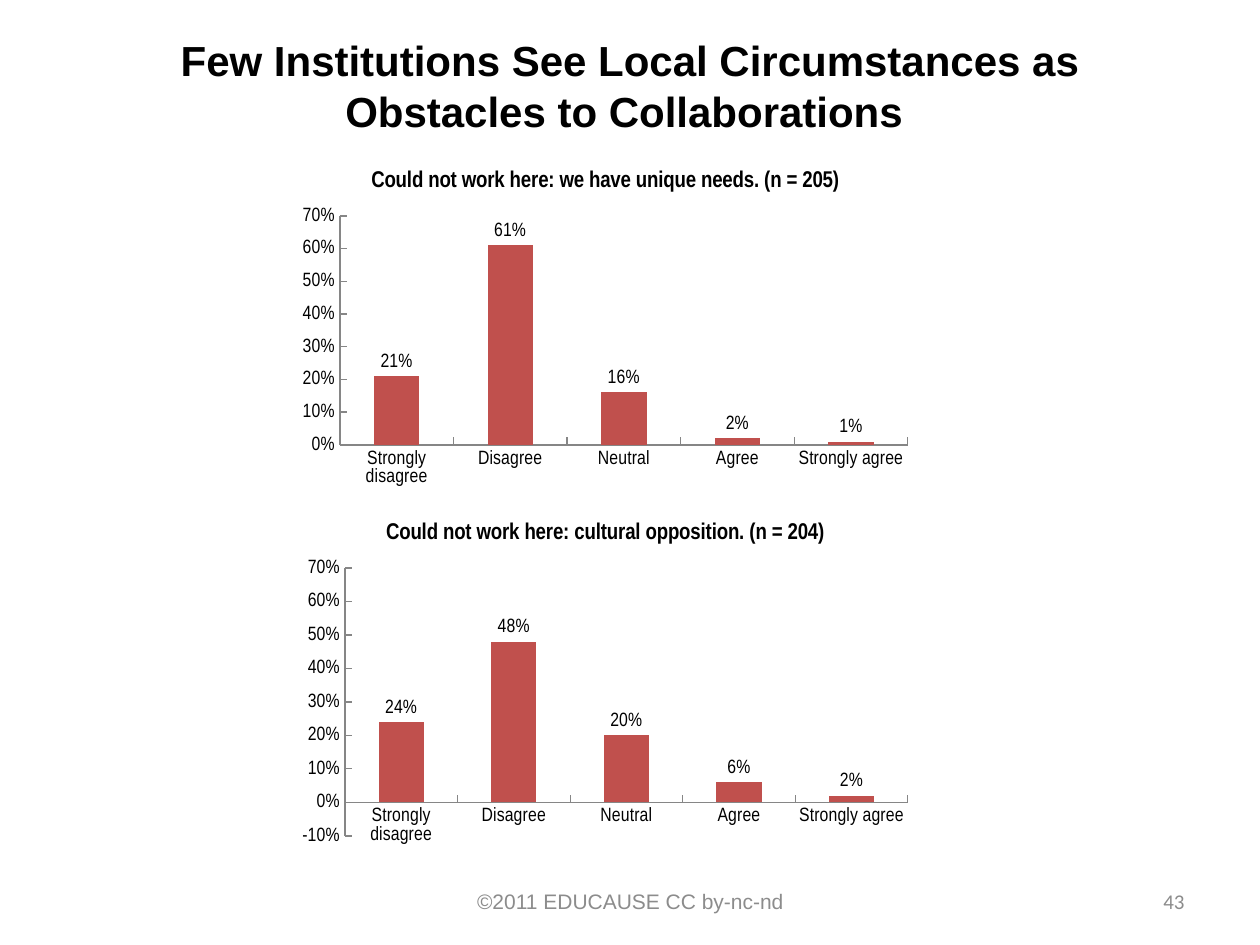
from dataclasses import dataclass

from lxml import etree
from pptx import Presentation
from pptx import util as u
from pptx.chart.data import CategoryChartData
from pptx.dml.color import RGBColor
from pptx.enum import chart as charts, text
from pptx.oxml import ns

PX_PER_INCH = 126


def px(length):
    return u.Emu(round(length * 914400 / PX_PER_INCH))


@dataclass(frozen=True)
class Theme:
    ink: str = "000000"
    muted: str = "8C8C8C"
    axis: str = "868686"
    bar: str = "C0504D"
    heading_font: str = "Arial"
    number_font: str = "Calibri"
    chart_font: str = "Arial Narrow"
    heading_size: int = 24
    footer_size: int = 12
    chart_size: int = 11
    chart_title_size: int = 13


class SlideBuilder:
    def __init__(self, deck, theme):
        self.theme = theme
        self.page = deck.slides.add_slide(deck.slide_layouts[6])

    def style(self, font, name, size, color, bold=False):
        font.name, font.size, font.bold = name, u.Pt(size), bold
        font.color.rgb = RGBColor.from_string(color)

    def label(self, area, words, align, *look):
        box = self.page.shapes.add_textbox(*map(px, area))
        frame = box.text_frame
        frame.word_wrap = True
        frame.vertical_anchor = text.MSO_ANCHOR.MIDDLE
        para = frame.paragraphs[0]
        para.alignment = align
        span = para.add_run()
        span.text = words
        self.style(span.font, *look)

    def column_chart(self, area, plot_area, title, answers, shares, low):
        theme = self.theme
        data = CategoryChartData(number_format="0%")
        data.categories = answers
        data.add_series("Share of institutions", shares)
        chart = self.page.shapes.add_chart(
            charts.XL_CHART_TYPE.COLUMN_CLUSTERED, *map(px, area), data).chart
        self.style(chart.font, theme.chart_font, theme.chart_size, theme.ink)
        chart.has_legend = False

        # Chart title
        chart.has_title = True
        span = chart.chart_title.text_frame.paragraphs[0].add_run()
        span.text = title
        self.style(span.font, theme.chart_font, theme.chart_title_size,
                   theme.ink, True)
        chart.chart_title.include_in_layout = False

        # Columns and their values
        plot = chart.plots[0]
        plot.gap_width = 150
        plot.vary_by_categories = False
        fill = plot.series[0].format.fill
        fill.solid()
        fill.fore_color.rgb = RGBColor.from_string(theme.bar)
        plot.has_data_labels = True
        labels = plot.data_labels
        labels.show_value = True
        labels.number_format, labels.number_format_is_linked = "0%", False
        labels.position = charts.XL_LABEL_POSITION.OUTSIDE_END

        # Axes
        for axis in (chart.category_axis, chart.value_axis):
            axis.has_major_gridlines = False
            axis.major_tick_mark = charts.XL_TICK_MARK.INSIDE
            axis.minor_tick_mark = charts.XL_TICK_MARK.NONE
            axis.format.line.color.rgb = RGBColor.from_string(theme.axis)
            axis.format.line.width = u.Pt(0.75)
        values = chart.value_axis
        values.minimum_scale, values.maximum_scale = low, 0.7
        values.major_unit = 0.1
        values.tick_labels.number_format = "0%"
        values.tick_labels.number_format_is_linked = False
        self.place_plot(chart, area, plot_area)

    def place_plot(self, chart, area, plot_area):
        left, top, width, height = area
        x, y, w, h = plot_area
        plot_xml = chart.plots[0]._element.getparent()
        for old in plot_xml.findall(ns.qn("c:layout")):
            plot_xml.remove(old)
        layout = etree.Element(ns.qn("c:layout"))
        manual = etree.SubElement(layout, ns.qn("c:manualLayout"))
        settings = {
            "layoutTarget": "inner", "xMode": "edge", "yMode": "edge",
            "x": (x - left) / width, "y": (y - top) / height,
            "w": w / width, "h": h / height,
        }
        for tag, value in settings.items():
            etree.SubElement(manual, ns.qn(f"c:{tag}")).set("val", str(value))
        plot_xml.insert(0, layout)


def main():
    deck = Presentation()
    deck.slide_width, deck.slide_height = px(1260), px(945)
    theme = Theme()
    slide = SlideBuilder(deck, theme)
    align = text.PP_ALIGN

    # Heading
    slide.label((63, 6, 1134, 158),
                "Few Institutions See Local Circumstances as "
                "Obstacles to Collaborations ", align.CENTER,
                theme.heading_font, theme.heading_size, theme.ink, True)

    # Footer
    slide.label((431, 876, 399, 50), "©2011 EDUCAUSE CC by-nc-nd",
                align.CENTER, theme.heading_font, theme.footer_size, theme.muted)
    slide.label((903, 876, 294, 50), "43", align.RIGHT,
                theme.number_font, theme.footer_size, theme.muted)

    # Survey charts
    answers = ("Strongly disagree", "Disagree", "Neutral", "Agree",
               "Strongly agree")
    slide.column_chart((290, 151, 630, 344), (340, 216, 568, 229),
                       "Could not work here: we have unique needs. (n = 205)",
                       answers, (0.21, 0.61, 0.16, 0.02, 0.01), 0)
    slide.column_chart((290, 503, 630, 350), (345, 568, 563, 268),
                       "Could not work here: cultural opposition. (n = 204)",
                       answers, (0.24, 0.48, 0.2, 0.06, 0.02), -0.1)

    deck.save("out.pptx")


if __name__ == "__main__":
    main()
